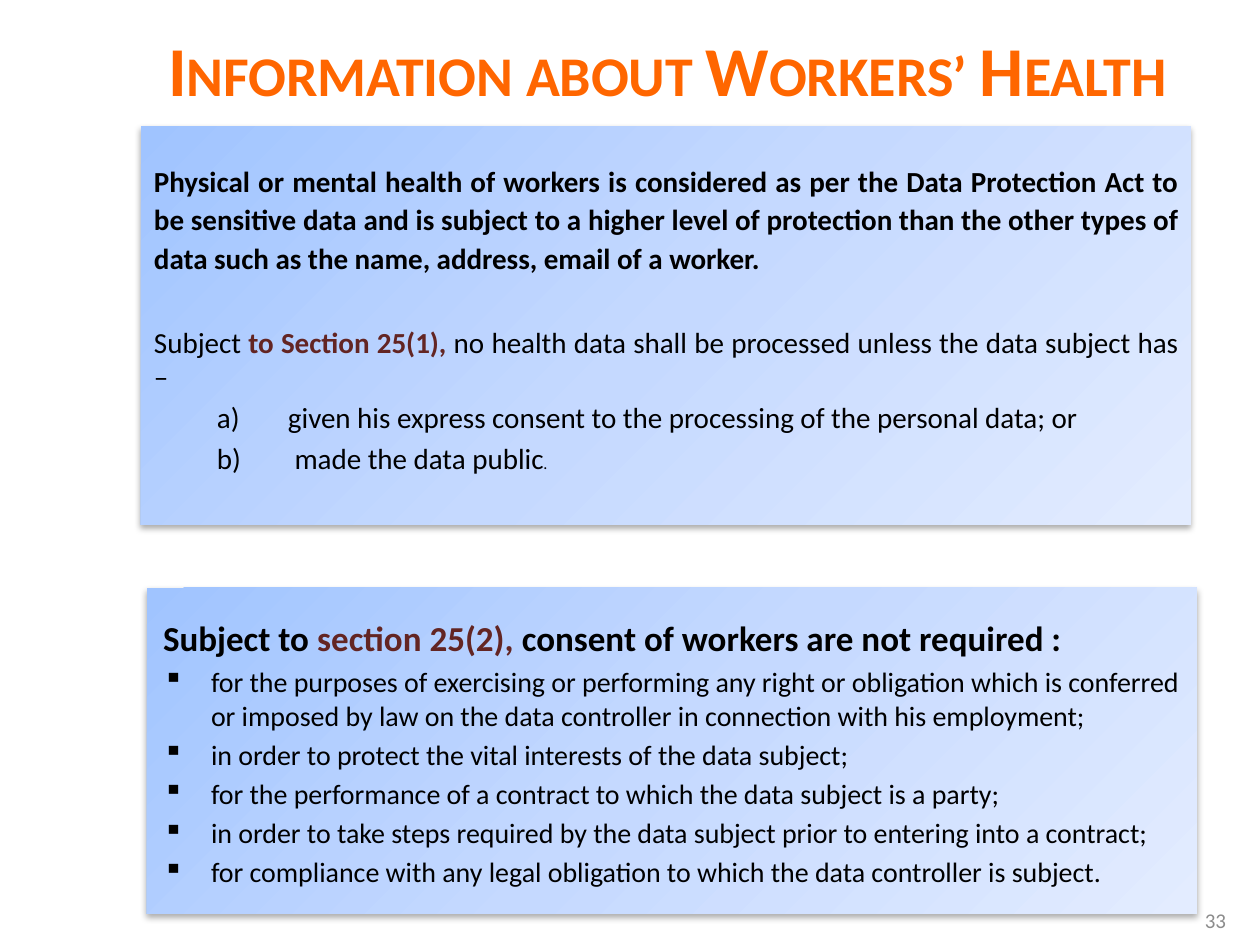
"""Build the slide on information about workers' health."""
from copy import deepcopy

from lxml.etree import SubElement
from pptx import Presentation
from pptx.dml.color import RGBColor
from pptx.enum.shapes import MSO_SHAPE
from pptx.enum.text import MSO_ANCHOR, PP_ALIGN
from pptx.oxml.ns import qn
from pptx.util import Emu, Pt

BLACK = RGBColor(0x00, 0x00, 0x00)
MAROON = RGBColor(0x63, 0x25, 0x23)
ORANGE = RGBColor(0xFF, 0x66, 0x00)
GREY = RGBColor(0x8C, 0x8C, 0x8C)
PANEL_BLUES = (
    RGBColor(0xA0, 0xC4, 0xFF),
    RGBColor(0xC5, 0xD9, 0xFF),
    RGBColor(0xE3, 0xEC, 0xFF),
)
EMU_PER_PX = 914400 / 126


def px(length):
    return Emu(round(length * EMU_PER_PX))


class HealthSlide:
    def __init__(self, font_name):
        self.deck = Presentation()
        self.deck.slide_width, self.deck.slide_height = px(1260), px(945)
        self.slide = self.deck.slides.add_slide(self.deck.slide_layouts[6])
        self.font_name = font_name

    def frame(self, shape, anchor, inset=(13, 6)):
        frame = shape.text_frame
        side, top = map(px, inset)
        settings = {
            "word_wrap": True,
            "vertical_anchor": anchor,
            "margin_left": side,
            "margin_right": side,
            "margin_top": top,
            "margin_bottom": px(6),
        }
        for name, value in settings.items():
            setattr(frame, name, value)
        return frame

    def label(self, box, words, align, small_caps=False, **style):
        shape = self.slide.shapes.add_textbox(*map(px, box))
        paragraph = self.frame(shape, MSO_ANCHOR.MIDDLE).paragraphs[0]
        paragraph.alignment = align
        run = self.run(paragraph, words, **style)
        if small_caps:
            run.font.bold = True
            run._r.get_or_add_rPr().set("cap", "small")

    def panel(self, box, inset):
        shape = self.slide.shapes.add_shape(MSO_SHAPE.RECTANGLE, *map(px, box))
        shape.line.fill.background()
        shape.fill.gradient()
        shape.fill.gradient_angle = 315
        stops = shape._element.spPr.find(".//" + qn("a:gsLst"))
        stops.insert(1, deepcopy(stops[0]))
        for index, (stop, blue) in enumerate(zip(shape.fill.gradient_stops, PANEL_BLUES)):
            stop.position = index / 2
            stop.color.rgb = blue
        self.cast_shadow(shape)
        return self.frame(shape, MSO_ANCHOR.TOP, inset)

    def cast_shadow(self, shape):
        shape.shadow.inherit = False
        effects = shape._element.spPr.find(qn("a:effectLst"))
        shadow = SubElement(effects, qn("a:outerShdw"), blurRad=str(Pt(3.5)),
                            dist=str(Pt(2.2)), dir="5400000", rotWithShape="0")
        black = SubElement(shadow, qn("a:srgbClr"), val=str(BLACK))
        SubElement(black, qn("a:alpha"), val="32000")

    def paragraph(self, frame, runs, align=PP_ALIGN.LEFT, before=0, spacing=1.0,
                  bullet=None, indent=(0, 0), **style):
        first = frame.paragraphs[0]
        paragraph = frame.add_paragraph() if first.runs else first
        settings = {"alignment": align, "space_before": Pt(before), "line_spacing": spacing}
        for name, value in settings.items():
            setattr(paragraph, name, value)
        if bullet:
            properties = paragraph._p.get_or_add_pPr()
            for name, value in zip(("marL", "indent"), indent):
                properties.set(name, str(px(value)))
            tag, attributes = bullet
            SubElement(properties, qn(tag), **attributes)
        for words, changes in runs:
            self.run(paragraph, words, **{**style, **changes})

    def run(self, paragraph, words, size, color=BLACK, bold=False):
        run = paragraph.add_run()
        run.text = words
        settings = {"name": self.font_name, "size": Pt(size), "bold": bold}
        for name, value in settings.items():
            setattr(run.font, name, value)
        run.font.color.rgb = color
        return run


def main():
    page = HealthSlide("Calibri")

    sensitive = page.panel((141, 126, 1050, 399), inset=(13, 34))
    body = {"align": PP_ALIGN.JUSTIFY, "size": 16.6}
    page.paragraph(sensitive, [(
        "Physical or mental health of workers is considered as per the Data Protection Act "
        "to be sensitive data and is subject to a higher level of protection than the other "
        "types of data such as the name, address, email of a worker.", {})],
        spacing=1.1, bold=True, **body)
    page.paragraph(sensitive, [
        ("Subject ", {}),
        ("to Section 25(1), ", {"color": MAROON, "bold": True}),
        ("no health data shall be processed unless the data subject has – ", {}),
    ], before=28, **body)
    conditions = (
        [("given his express consent to the processing of the personal data; or", {})],
        [(" made the data public", {}), (".", {"size": 9.2})],
    )
    for condition in conditions:
        page.paragraph(sensitive, condition, before=3.3, indent=(134, -71),
                       bullet=("a:buAutoNum", {"type": "alphaLcParenR"}), **body)

    page.label((111, 21, 1113, 95), "Information about Workers’ Health", PP_ALIGN.CENTER,
               small_caps=True, size=40, color=ORANGE)

    exempt = page.panel((147, 588, 1050, 326), inset=(16, 29))
    page.paragraph(exempt, [
        ("Subject to ", {}),
        ("section 25(2), ", {"color": MAROON}),
        ("consent of workers are not required :", {}),
    ], size=20, bold=True)
    exemptions = (
        "for the purposes of exercising or performing any right or obligation which is "
        "conferred or imposed by law on the data controller in connection with his employment;",
        "in order to protect the vital interests of the data subject;",
        "for the performance of a contract to which the data subject is a party;",
        "in order to take steps required by the data subject prior to entering into a contract;",
        "for compliance with any legal obligation to which the data controller is subject.",
    )
    for exemption in exemptions:
        page.paragraph(exempt, [(exemption, {})], before=3.2, indent=(48, -48),
                       bullet=("a:buChar", {"char": "▪"}), size=16)

    page.label((945, 895, 294, 50), "33", PP_ALIGN.RIGHT, size=12, color=GREY)
    page.deck.save("out.pptx")


if __name__ == "__main__":
    main()
